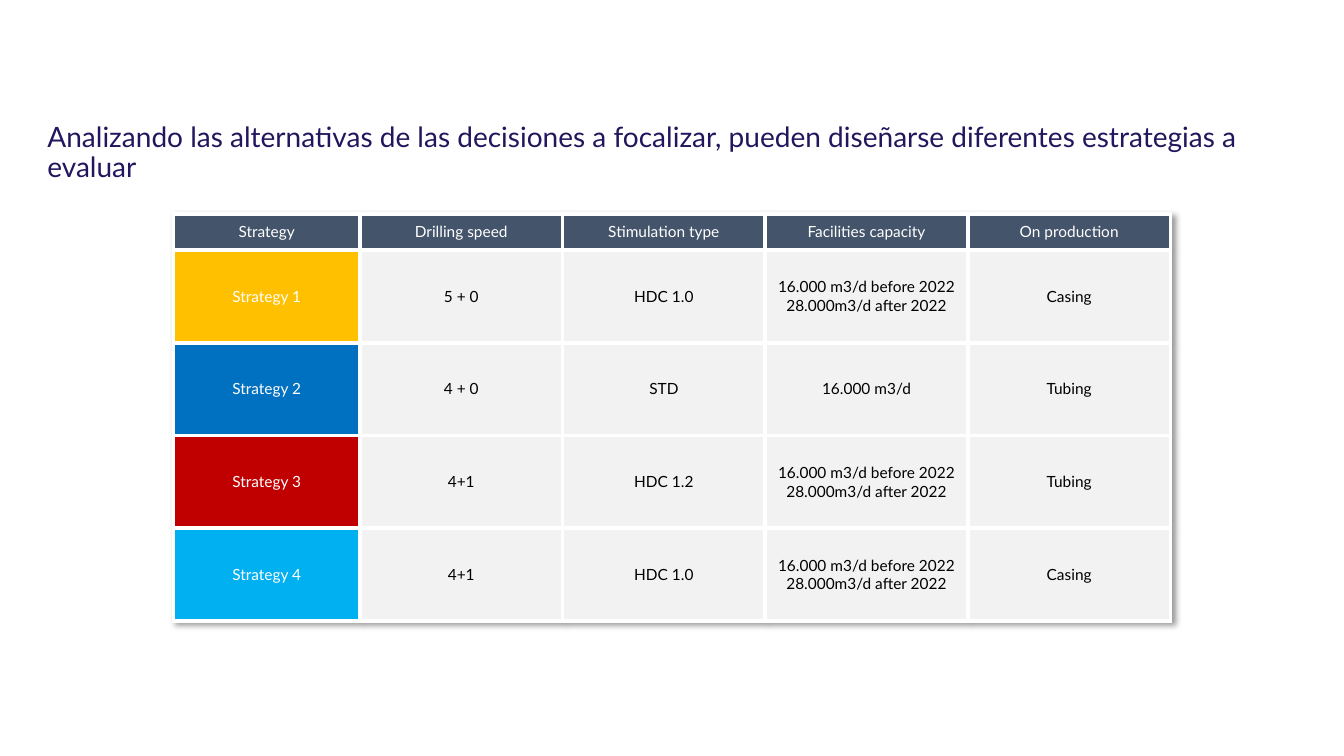
from lxml import etree
from pptx import Presentation
from pptx.dml.color import RGBColor
from pptx.enum.text import MSO_ANCHOR, MSO_AUTO_SIZE, PP_ALIGN
from pptx.oxml import parse_xml
from pptx.oxml.ns import nsdecls, qn
from pptx.util import Emu, Pt

FONT = "Lato"
WHITE, BLACK, NAVY = "FFFFFF", "000000", "21175E"
HEADER_FILL, BODY_FILL = "44546A", "F2F2F2"
BORDER_PT = 3

TITLE = ("Analizando las alternativas de las decisiones a focalizar, "
         "pueden diseñarse diferentes estrategias a evaluar")
HEADERS = ["Strategy", "Drilling speed", "Stimulation type",
           "Facilities capacity", "On production"]
STAGED = "16.000 m3/d before 2022\n28.000m3/d after 2022"
STRATEGIES = [
    ("FFC000", ["Strategy 1", "5 + 0", "HDC 1.0", STAGED, "Casing"]),
    ("0070C0", ["Strategy 2", "4 + 0", "STD", "16.000 m3/d", "Tubing"]),
    ("C00000", ["Strategy 3", "4+1", "HDC 1.2", STAGED, "Tubing"]),
    ("00B0F0", ["Strategy 4", "4+1", "HDC 1.0", STAGED, "Casing"]),
]
COL_WIDTHS = [185] + [201] * 4
ROW_HEIGHTS = [36] + [92] * len(STRATEGIES)


def px(n):
    """Length in EMU, at 100 px to the inch."""
    return Emu(n * 9144)


def rgb(color):
    return RGBColor.from_string(color)


def add_run(p, text, size, color):
    r = p.add_run()
    r.text = text
    r.font.name = FONT
    r.font.size = Pt(size)
    r.font.bold = False
    r.font.color.rgb = rgb(color)


def set_margins(box, x, y):
    box.margin_left = box.margin_right = px(x)
    box.margin_top = box.margin_bottom = px(y)


def set_title(slide, text):
    sp = slide.shapes.title
    sp.left, sp.top, sp.width, sp.height = map(px, (47, 117, 1271, 71))
    tf = sp.text_frame
    tf.word_wrap = True
    tf.auto_size = MSO_AUTO_SIZE.NONE
    tf.vertical_anchor = MSO_ANCHOR.MIDDLE
    set_margins(tf, 0, 5)
    p = tf.paragraphs[0]
    p.alignment = PP_ALIGN.LEFT
    p.line_spacing = 0.9
    add_run(p, text, 20, NAVY)


def set_borders(cell):
    tc_pr = cell._tc.get_or_add_tcPr()
    for i, side in enumerate(("lnL", "lnR", "lnT", "lnB")):
        ln = etree.Element(qn(f"a:{side}"), w=str(Pt(BORDER_PT)))
        fill = etree.SubElement(ln, qn("a:solidFill"))
        etree.SubElement(fill, qn("a:srgbClr"), val=WHITE)
        tc_pr.insert(i, ln)


def fill_cell(cell, text, fill, color):
    cell.fill.solid()
    cell.fill.fore_color.rgb = rgb(fill)
    set_borders(cell)
    set_margins(cell, 0, 0)
    cell.vertical_anchor = MSO_ANCHOR.MIDDLE
    tf = cell.text_frame
    for i, line in enumerate(text.split("\n")):
        p = tf.add_paragraph() if i else tf.paragraphs[0]
        p.alignment = PP_ALIGN.CENTER
        add_run(p, line, 11, color)


def add_table_shadow(table):
    table._tbl.tblPr.insert(0, parse_xml(
        f'<a:effectLst {nsdecls("a")}>'
        '<a:outerShdw blurRad="50800" dist="38100" dir="2700000" algn="tl">'
        f'<a:srgbClr val="{BLACK}"><a:alpha val="40000"/></a:srgbClr>'
        '</a:outerShdw></a:effectLst>'))


def add_strategy_table(slide):
    table = slide.shapes.add_table(
        len(ROW_HEIGHTS), len(COL_WIDTHS), px(172), px(212),
        px(sum(COL_WIDTHS)), px(sum(ROW_HEIGHTS))).table
    table.horz_banding = False
    add_table_shadow(table)
    for col, width in zip(table.columns, COL_WIDTHS):
        col.width = px(width)
    for row, height in zip(table.rows, ROW_HEIGHTS):
        row.height = px(height)
    for c, header in enumerate(HEADERS):
        fill_cell(table.cell(0, c), header, HEADER_FILL, WHITE)
    for r, (accent, texts) in enumerate(STRATEGIES, 1):
        for c, text in enumerate(texts):
            fill, color = (BODY_FILL, BLACK) if c else (accent, WHITE)
            fill_cell(table.cell(r, c), text, fill, color)


def main():
    prs = Presentation()
    prs.slide_width, prs.slide_height = px(1333), px(750)
    slide = prs.slides.add_slide(prs.slide_layouts[5])
    set_title(slide, TITLE)
    add_strategy_table(slide)
    prs.save("out.pptx")


if __name__ == "__main__":
    main()
